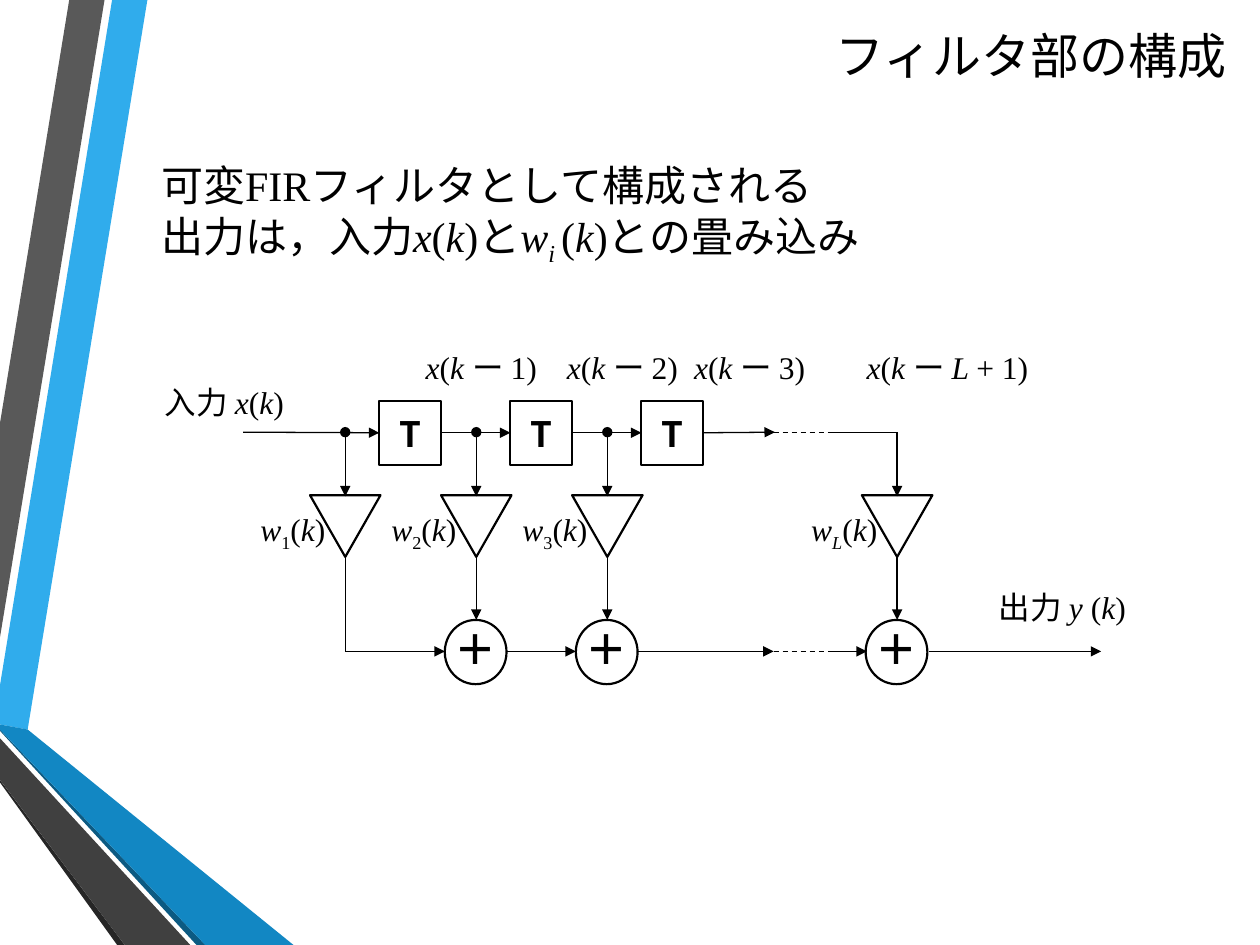
from lxml.etree import SubElement
from pptx import Presentation
from pptx.dml.color import RGBColor
from pptx.enum.dml import MSO_LINE
from pptx.enum.shapes import MSO_CONNECTOR, MSO_SHAPE
from pptx.enum.text import MSO_ANCHOR, PP_ALIGN
from pptx.oxml.ns import qn
from pptx.util import Inches, Pt

color = RGBColor.from_string
deck = Presentation()
deck.slide_width, deck.slide_height = Inches(10), Inches(7.5)
slide = deck.slides.add_slide(deck.slide_layouts[5])
shapes = slide.shapes


def write(left, top, width, height, lines, size=18, align=PP_ALIGN.LEFT):
    # *...* is italic, a leading _ is subscript
    box = shapes.add_textbox(Inches(left), Inches(top), Inches(width), Inches(height))
    frame = box.text_frame
    frame.word_wrap = True
    for row, line in enumerate(lines):
        para = frame.add_paragraph() if row else frame.paragraphs[0]
        para.alignment = align
        para.font.size = Pt(size)
        para.font.name = "Times New Roman"
        para.font.color.rgb = color("000000")
        for turn, part in enumerate(line.split("*")):
            if part:
                run = para.add_run()
                run.text = part.removeprefix("_")
                run.font.italic = turn % 2 == 1
                if part.startswith("_"):
                    run.font._element.set("baseline", "-25000")


def wire(x1, y1, x2, y2, head=None, tail="triangle", dash=False):
    line = shapes.add_connector(
        MSO_CONNECTOR.STRAIGHT, Inches(x1), Inches(y1), Inches(x2), Inches(y2))
    line.line.color.rgb = color("000000")
    line.line.width = Pt(0.75)
    if dash:
        line.line.dash_style = MSO_LINE.DASH
    for tag, kind in (("a:headEnd", head), ("a:tailEnd", tail)):
        if kind:
            SubElement(line.line._get_or_add_ln(), qn(tag)).set("type", kind)
    SubElement(line._element.spPr, qn("a:effectLst"))
    return line


bands = [
    ("30ACEC", [(0, 5.44), (0, 5.75), (0.22, 5.79), (1.17, 0), (0.89, 0)]),
    ("595959", [(0.83, 0), (0.55, 0), (0, 3.36), (0, 5.06)]),
    ("262626", [(0, 6.19), (0, 6.21), (0.93, 7.5), (0.99, 7.5)]),
    ("0C5A82", [(0, 5.79), (0, 5.8), (1.56, 7.5), (1.63, 7.5)]),
    ("1287C3", [(0, 5.79), (1.63, 7.5), (2.33, 7.5), (0.22, 5.79), (0, 5.75)]),
    ("404040", [(0, 6.19), (0.99, 7.5), (1.51, 7.5), (0, 5.86)]),
]
for fill, points in bands:
    points = [(Inches(x), Inches(y)) for x, y in points]
    pen = shapes.build_freeform(*points[0])
    pen.add_line_segments(points[1:], close=True)
    band = pen.convert_to_shape()
    band.shadow.inherit = False
    band.fill.solid()
    band.fill.fore_color.rgb = color(fill)
    band.line.fill.background()

title = shapes.title
title.left, title.top = Inches(1.4), Inches(-0.08)
title.width, title.height = Inches(8.43), Inches(1.03)
title.text_frame.text = "フィルタ部の構成"
title.text_frame.vertical_anchor = MSO_ANCHOR.MIDDLE
head = title.text_frame.paragraphs[0]
head.alignment = PP_ALIGN.RIGHT
head.font.size = Pt(28)
head.font.name = "Calibri"
head.font.color.rgb = color("000000")

write(1.18, 1.22, 8.41, 0.91, [
    "可変FIRフィルタとして構成される",
    "出力は，入力*x*(*k*)と*w**_i *(*k*)との畳み込み",
], size=24)

taps = [2.74, 3.78, 4.82, 7.12]
top, low = 3.43, 5.17
parts = [(MSO_SHAPE.RECTANGLE, x + 0.27, 3.18, 0.49, 0.51, "T", 20, "Noto Sans CJK JP")
         for x in taps[:3]]
parts += [(MSO_SHAPE.ISOSCELES_TRIANGLE, x - 0.28, 3.93, 0.56, 0.49, "", 18, "Calibri")
          for x in taps]
parts += [(MSO_SHAPE.OVAL, x - 0.25, 4.92, 0.49, 0.51, "＋", 24, "Calibri")
          for x in taps[1:]]
delays = []
for kind, left, y, wide, high, sign, size, face in parts:
    part = shapes.add_shape(kind, Inches(left), Inches(y), Inches(wide), Inches(high))
    part.shadow.inherit = False
    part.fill.solid()
    part.fill.fore_color.rgb = color("FFFFFF")
    part.line.color.rgb = color("000000")
    part.line.width = Pt(1.25)
    if kind == MSO_SHAPE.ISOSCELES_TRIANGLE:
        part.rotation = 180
        continue
    if kind == MSO_SHAPE.RECTANGLE:
        delays.append(part)
    frame = part.text_frame
    frame.margin_left = frame.margin_right = frame.margin_bottom = 0
    frame.margin_top = Inches(0.12)
    frame.vertical_anchor = MSO_ANCHOR.MIDDLE
    frame.text = sign
    para = frame.paragraphs[0]
    para.alignment = PP_ALIGN.CENTER
    para.line_spacing = Pt(16)
    para.font.size = Pt(size)
    para.font.name = face
    para.font.bold = True
    para.font.color.rgb = color("000000")

wire(1.93, top, 3.01, top).end_connect(delays[0], 1)
for one, two in zip(delays, delays[1:]):
    link = wire(3.5, top, 4.05, top)
    link.begin_connect(one, 3)
    link.end_connect(two, 1)
wire(5.59, top, 6.15, top).begin_connect(delays[2], 3)
wire(6.57, top, 7.12, top, tail=None)

for x in taps:
    wire(x, top, x, 3.94, head=None if x == taps[-1] else "oval")
for x in taps[1:]:
    wire(x, 4.41, x, 4.92)
wire(taps[0], 4.41, taps[0], low, tail=None)
for start, end in [(2.74, 3.53), (4.02, 4.57), (5.06, 6.14), (6.6, 6.88), (7.37, 8.74)]:
    wire(start, low, end, low)
for y in (top, low):
    wire(6.14, y, 6.7, y, tail=None, dash=True)

for x, mark in zip(taps, ["*_1**", "*_2**", "*_3**", "**_L*"]):
    write(x - 0.95, 4, 0.89, 0.4, [f"*w{mark}(*k*)"], align=PP_ALIGN.RIGHT)
for x, lag in [(3.28, "1"), (4.4, "2"), (5.41, "3"), (6.78, "*L *+ 1")]:
    write(x, 2.71, 1.75, 0.4, [f"*x*(*k *ー {lag})"])
write(1.21, 2.99, 1.24, 0.4, ["入力 *x*(*k*)"])
write(7.83, 4.62, 1.76, 0.4, ["出力 *y *(*k*)"])

deck.save("out.pptx")
